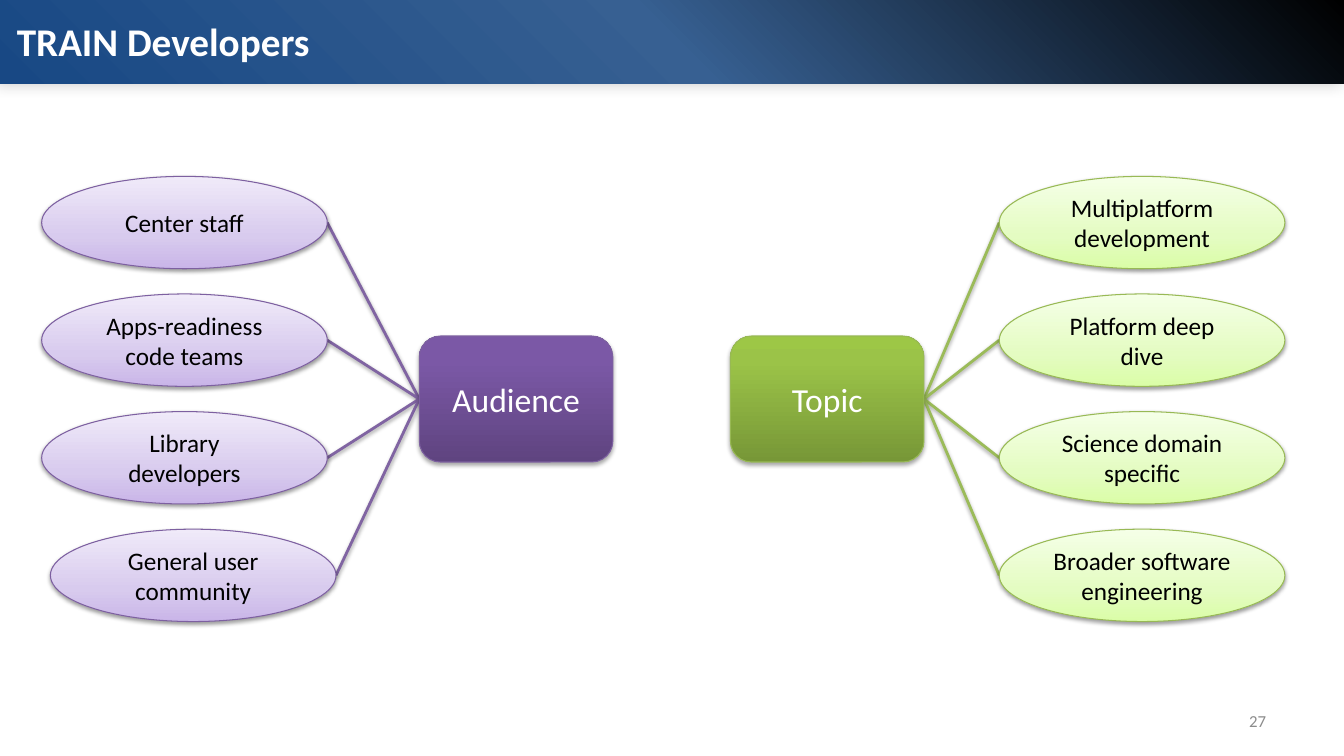
from lxml import etree
from pptx import Presentation
from pptx import util as u
from pptx.dml.color import RGBColor
from pptx.enum import shapes, text
from pptx.oxml import ns

Pt = u.Pt

# Content
TITLE = "TRAIN Developers"
PAGE = "27"
GROUPS = [
    {
        "hub": "Audience", "hub_x": 299.5, "side": "left",
        "items": [("Center staff", 29.75), ("Apps-readiness code teams", 29.75),
                  ("Library developers", 29.75), ("General user community", 36)],
        "dark": [(0, "5F4480"), (80, "7B58A6"), (100, "7C57A8")],
        "light": [(0, "C9B5E8"), (35, "D8CBEE"), (100, "F0EAF9")],
        "edge": "7D60A0", "link": "8064A2",
    },
    {
        "hub": "Topic", "hub_x": 521.75, "side": "right",
        "items": [("Multiplatform development", 713.75), ("Platform deep dive", 713.75),
                  ("Science domain specific", 713.75), ("Broader software engineering", 713.75)],
        "dark": [(0, "779737"), (80, "9BC348"), (100, "9DC746")],
        "light": [(0, "DAFDA7"), (35, "E4FCC2"), (100, "F5FFE7")],
        "edge": "98B955", "link": "9BBB59",
    },
]
BAND = [(0, "000000"), (50, "376092"), (100, "184884")]

# Layout in points
WIDE, HIGH = 960, 540
HUB_W, HUB_H, HUB_Y = 138.25, 90, 240
OVAL_W, OVAL_H, OVAL_Y, STEP = 204, 66, 126, 84

# Shadows: opacity %, blur, distance, angle
SOFT = (38, 3.1, 1.6, 90)
DEEP = (35, 3.1, 1.8, 90)
BASE = (20, 10, 3, 180)

AL = text.PP_ALIGN
KIND = shapes.MSO_SHAPE

prs = Presentation()
prs.slide_width, prs.slide_height = Pt(WIDE), Pt(HIGH)
slide = prs.slides.add_slide(prs.slide_layouts[6])
draw = slide.shapes


def rgb(code):
    return RGBColor.from_string(code)


def node(top, tag, **attrs):
    return etree.SubElement(top, ns.qn("a:" + tag), {k: str(v) for k, v in attrs.items()})


def shade(props, look):
    """Give a shape or line an outer shadow."""
    alpha, blur, dist, turn = look
    box = props.find(ns.qn("a:effectLst"))
    if box is None:
        box = node(props, "effectLst")
    cast = node(box, "outerShdw", blurRad=Pt(blur), dist=Pt(dist),
                dir=turn * 60000, rotWithShape=0)
    node(node(cast, "srgbClr", val="000000"), "alpha", val=alpha * 1000)


def blend(shape, stops, turn):
    """Fill a shape with a linear gradient."""
    shape.fill.background()
    props = shape._element.spPr
    old = props.find(ns.qn("a:noFill"))
    fill = node(props, "gradFill", rotWithShape=1)
    props.replace(old, fill)
    row = node(fill, "gsLst")
    for pos, code in stops:
        node(node(row, "gs", pos=pos * 1000), "srgbClr", val=code)
    node(fill, "lin", ang=turn * 60000, scaled=0)


def write(shape, words, size, color, align, bold=False):
    frame = shape.text_frame
    frame.word_wrap = True
    frame.vertical_anchor = text.MSO_ANCHOR.MIDDLE
    para = frame.paragraphs[0]
    para.text, para.alignment = words, align
    font = para.runs[0].font
    for key, val in {"name": "Calibri", "size": Pt(size), "bold": bold}.items():
        setattr(font, key, val)
    font.color.rgb = rgb(color)


def block(kind, area, stops, turn, look, edge=None):
    shape = draw.add_shape(kind, *map(Pt, area))
    blend(shape, stops, turn)
    if edge:
        shape.line.color.rgb = rgb(edge)
        shape.line.width = Pt(0.75)
    else:
        shape.line.fill.background()
    shape.shadow.inherit = False
    shade(shape._element.spPr, look)
    return shape


def label(area, *style):
    write(draw.add_textbox(*map(Pt, area)), *style)


def link(start, end, color):
    line = draw.add_connector(shapes.MSO_CONNECTOR.STRAIGHT, *map(Pt, start + end))
    line.line.color.rgb = rgb(color)
    line.line.width = Pt(2)
    shade(line._element.spPr, SOFT)


# Header band and title
block(KIND.RECTANGLE, (0, 0, WIDE, 60), BAND, 135, BASE)
label((5, 1.5, 864, 56), TITLE, 28, "FFFFFF", AL.LEFT, True)

# Hubs with their linked ovals
for group in GROUPS:
    left = group["side"] == "left"
    port = (group["hub_x"] + (0 if left else HUB_W), HUB_Y + HUB_H / 2)
    spots = [(words, x, OVAL_Y + i * STEP) for i, (words, x) in enumerate(group["items"])]
    for _, x, y in spots:
        link((x + (OVAL_W if left else 0), y + OVAL_H / 2), port, group["link"])
    hub = block(KIND.ROUNDED_RECTANGLE, (group["hub_x"], HUB_Y, HUB_W, HUB_H),
                group["dark"], 270, DEEP, group["edge"])
    write(hub, group["hub"], 24, "FFFFFF", AL.CENTER)
    for words, x, y in spots:
        oval = block(KIND.OVAL, (x, y, OVAL_W, OVAL_H), group["light"], 270, SOFT, group["edge"])
        write(oval, words, 18, "000000", AL.CENTER)

# Page number
label((687.5, 500.5, 224, 28.75), PAGE, 12, "8C8C8C", AL.RIGHT)

prs.save("out.pptx")
